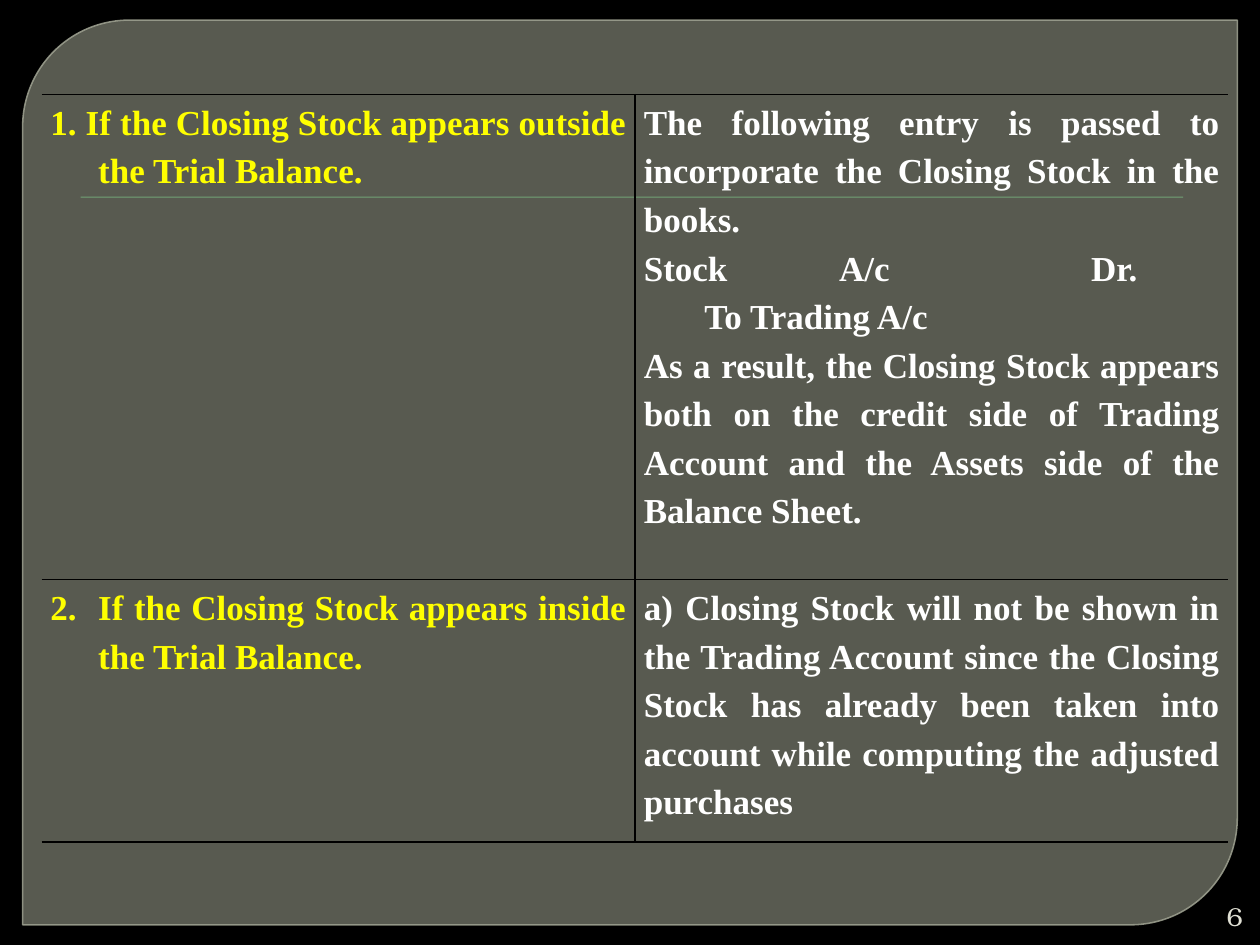
"""Build a slide on how closing stock is treated in the accounts."""
from lxml import etree
from pptx import Presentation
from pptx.dml.color import RGBColor
from pptx.enum.shapes import MSO_SHAPE
from pptx.enum.text import MSO_ANCHOR, PP_ALIGN
from pptx.oxml.ns import qn
from pptx.util import Inches, Pt

PANEL = MSO_SHAPE.ROUND_2_DIAG_RECTANGLE
RECT = MSO_SHAPE.RECTANGLE
MIDDLE = MSO_ANCHOR.MIDDLE
JUSTIFY, RIGHT = PP_ALIGN.JUSTIFY, PP_ALIGN.RIGHT
BLACK = RGBColor(0x00, 0x00, 0x00)
OLIVE = RGBColor(0x88, 0x8B, 0x7B)
EDGE = RGBColor(0x9D, 0xA0, 0x90)
GREEN = RGBColor(0x72, 0xA3, 0x76)
CREAM = RGBColor(0xE0, 0xE0, 0xD4)
YELLOW = RGBColor(0xFF, 0xFF, 0x00)
WHITE = RGBColor(0xFF, 0xFF, 0xFF)


def fade(fill, percent):
    color = fill._xPr.find(qn("a:solidFill"))[0]
    etree.SubElement(color, qn("a:alpha"), val=str(percent * 1000))


def border(cell, side, shown):
    line = etree.SubElement(cell._tc.get_or_add_tcPr(), qn("a:ln" + side), w="12700")
    if shown:
        fill = etree.SubElement(line, qn("a:solidFill"))
        etree.SubElement(fill, qn("a:srgbClr"), val=str(BLACK))
    else:
        etree.SubElement(line, qn("a:noFill"))


deck = Presentation()
deck.slide_width, deck.slide_height = Inches(10), Inches(7.5)
slide = deck.slides.add_slide(deck.slide_layouts[6])
slide.background.fill.solid()
slide.background.fill.fore_color.rgb = BLACK

panel = slide.shapes.add_shape(PANEL, Inches(0.18), Inches(0.16), Inches(9.64), Inches(7.18))
panel.adjustments[0], panel.adjustments[1] = 0.118, 0
rule = slide.shapes.add_shape(RECT, Inches(0.64), Inches(1.56), Inches(8.75), Inches(0.01))
for shape, color in ((panel, OLIVE), (rule, GREEN)):
    shape.shadow.inherit = False
    shape.fill.solid()
    shape.fill.fore_color.rgb = color
fade(panel.fill, 65)
panel.line.color.rgb = EDGE
panel.line.width = Pt(0.87)
fade(panel.line.fill, 88)
rule.line.fill.background()

box = slide.shapes.add_textbox(Inches(9.45), Inches(7.12), Inches(0.51), Inches(0.3))
frame = box.text_frame
frame.word_wrap = True
frame.vertical_anchor = MIDDLE
number = frame.paragraphs[0]
number.alignment = RIGHT
run = number.add_run()
run.text = "6"
for name, value in {"size": Pt(14.8), "name": "TeX Gyre Bonum"}.items():
    setattr(run.font, name, value)
run.font.color.rgb = CREAM

ROWS = [
    (["1. If the Closing Stock appears outside the Trial Balance."],
     ["The following entry is passed to incorporate the Closing Stock in the books.",
      "Stock\tA/c\tDr.",
      "\tTo Trading A/c",
      "As a result, the Closing Stock appears both on the credit side of Trading Account "
      "and the Assets side of the Balance Sheet."]),
    (["2.\tIf the Closing Stock appears inside the Trial Balance."],
     ["a) Closing Stock will not be shown in the Trading Account since the Closing Stock "
      "has already been taken into account while computing the adjusted purchases"]),
]
FONT = {"size": Pt(20), "name": "Times New Roman", "bold": True}
CELL = {"margin_left": Inches(0.07), "margin_right": Inches(0.07),
        "margin_top": 0, "margin_bottom": 0}
STOPS = {"Stock": (1.55, 3.55), "\tTo": (0.48,)}

table = slide.shapes.add_table(2, 2, Inches(0.33), Inches(0.75), Inches(9.42), Inches(5.9)).table
table.first_row = table.horz_banding = False
for row, height in zip(table.rows, (3.85, 2.05)):
    row.height = Inches(height)

for r, entry in enumerate(ROWS):
    for c, lines in enumerate(entry):
        cell = table.cell(r, c)
        for name, value in CELL.items():
            setattr(cell, name, value)
        for side, shown in (("L", c == 1), ("R", c == 0), ("T", True), ("B", True)):
            border(cell, side, shown)
        cell.fill.background()
        for i, text in enumerate(lines):
            frame = cell.text_frame
            para = frame.add_paragraph() if i else frame.paragraphs[0]
            para.alignment = JUSTIFY
            para.line_spacing = 1.25
            props = para._p.get_or_add_pPr()
            if c == 0:
                props.set("marL", str(Inches(0.38)))
                props.set("indent", str(-Inches(0.38)))
            for start, stops in STOPS.items():
                if text.startswith(start):
                    tabs = etree.SubElement(props, qn("a:tabLst"))
                    for stop in stops:
                        etree.SubElement(tabs, qn("a:tab"), pos=str(Inches(stop)), algn="l")
            run = para.add_run()
            run.text = text
            for name, value in FONT.items():
                setattr(run.font, name, value)
            run.font.color.rgb = WHITE if c else YELLOW

deck.save("out.pptx")
